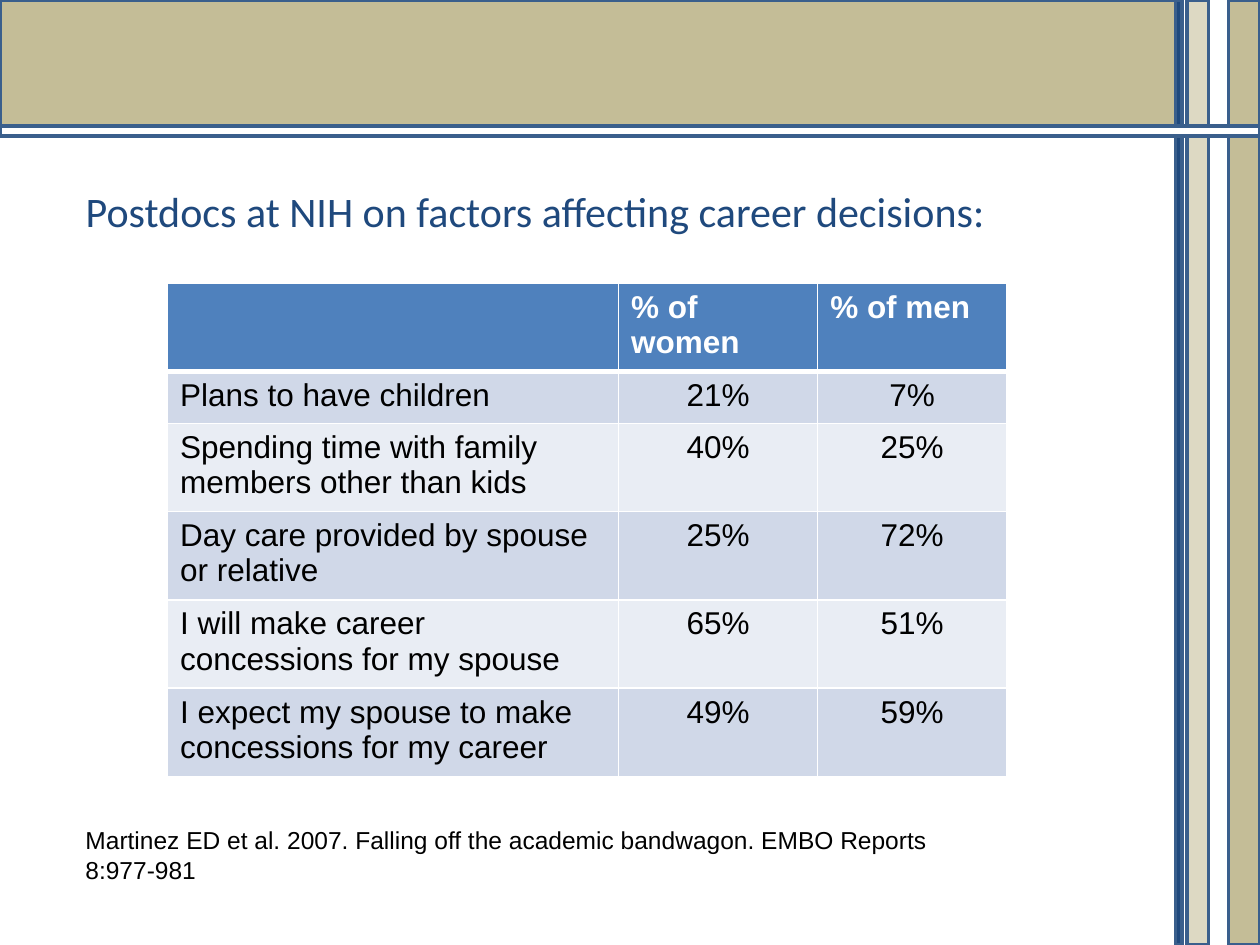
from lxml.etree import SubElement
from pptx import Presentation
from pptx.dml.color import RGBColor
from pptx.enum.shapes import MSO_SHAPE as Shape
from pptx.enum.text import PP_ALIGN as Align
from pptx.oxml.ns import qn
from pptx.util import Inches, Pt


def color(value):
    return RGBColor.from_string(value)


def write(para, text, **formats):
    span = para.add_run()
    span.text = text
    span.font.color.rgb = color(formats.pop("ink", "000000"))
    for name, value in formats.items():
        setattr(span.font, name, value)


deck = Presentation()
deck.slide_width, deck.slide_height = Inches(10), Inches(7.5)
page = deck.slides.add_slide(deck.slide_layouts[1])
title = page.shapes.title.element
title.getparent().remove(title)

# Frame of bands along the top and right
bands = [
    (0, 0, 9.33, 1, "C4BD97"),
    (9.75, 0, 0.25, 7.5, "C4BD97"),
    (9.42, 0, 0.17, 7.5, "DDD9C3"),
    (9.33, 0, 0.05, 7.5, "1F497D"),
    (0, 1, 10, 0.08, "FFFFFF"),
]
for *place, fill in bands:
    band = page.shapes.add_shape(Shape.RECTANGLE, *map(Inches, place))
    band.shadow.inherit = False
    band.fill.solid()
    band.fill.fore_color.rgb = color(fill)
    band.line.color.rgb = color("3A5F8C")
    band.line.width = Pt(2)

# Heading in the body placeholder, without its bullet
body = page.placeholders[1]
body.left, body.top, body.width, body.height = map(Inches, (0.58, 1.42, 8.25, 5.33))
para = body.text_frame.paragraphs[0]
props = para._p.get_or_add_pPr()
props.set("marL", "0")
props.set("indent", "0")
SubElement(props, qn("a:buNone"))
para.space_before = Pt(0)
write(para, "Postdocs at NIH on factors affecting career decisions:",
      size=Pt(24), name="Calibri", ink="1F497D")

# Citation
box = page.shapes.add_textbox(*map(Inches, (0.58, 6.5, 7.17, 0.57)))
box.text_frame.word_wrap = True
write(box.text_frame.paragraphs[0],
      "Martinez ED et al. 2007. Falling off the academic bandwagon. EMBO Reports 8:977-981",
      size=Pt(14), name="Arial")

# Survey table
rows = [
    ("", "% of women", "% of men"),
    ("Plans to have children", "21%", "7%"),
    ("Spending time with family members other than kids", "40%", "25%"),
    ("Day care provided by spouse or relative", "25%", "72%"),
    ("I will make career concessions for my spouse", "65%", "51%"),
    ("I expect my spouse to make concessions for my career", "49%", "59%"),
]
row_height = 0.41
table = page.shapes.add_table(len(rows), 3, Inches(1.33), Inches(2.25), Inches(6.66),
                              Inches(row_height * len(rows))).table
for column, width in zip(table.columns, (3.58, 1.58, 1.5)):
    column.width = Inches(width)

for r, texts in enumerate(rows):
    table.rows[r].height = Inches(row_height)
    header = r == 0
    fill = "4F81BD" if header else ("E9EDF4", "D0D8E8")[r % 2]
    for c, text in enumerate(texts):
        cell = table.cell(r, c)
        # White borders, thicker between header and first row
        cell_props = cell._tc.get_or_add_tcPr()
        for side in "LRTB":
            thick = (r, side) in ((0, "B"), (1, "T"))
            line = SubElement(cell_props, qn(f"a:ln{side}"), w=str(Pt(3 if thick else 1)))
            SubElement(SubElement(line, qn("a:solidFill")), qn("a:srgbClr"), val="FFFFFF")
        cell.fill.solid()
        cell.fill.fore_color.rgb = color(fill)
        para = cell.text_frame.paragraphs[0]
        if c and not header:
            para.alignment = Align.CENTER
        if text:
            write(para, text, size=Pt(18), name="Arial", bold=header,
                  ink="FFFFFF" if header else "000000")

deck.save("out.pptx")
